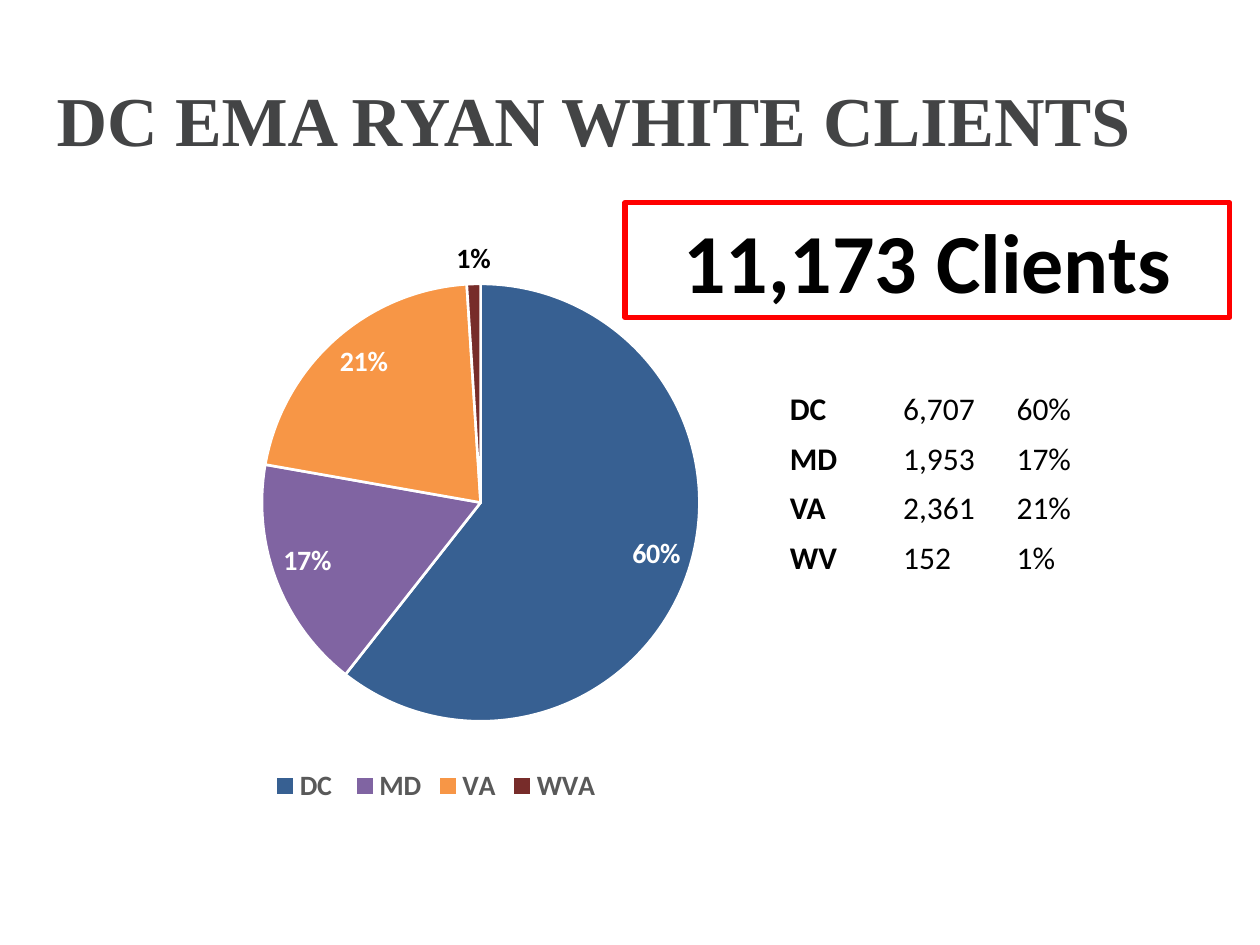
from pptx import Presentation
from pptx.chart.data import CategoryChartData
from pptx.dml.color import RGBColor
from pptx.enum.chart import XL_CHART_TYPE as ChartType
from pptx.enum.chart import XL_LABEL_POSITION as LabelPos
from pptx.enum.chart import XL_LEGEND_POSITION as LegendPos
from pptx.enum.shapes import MSO_SHAPE as Shape
from pptx.enum.text import MSO_ANCHOR as Anchor
from pptx.enum.text import PP_ALIGN as Align
from pptx.oxml import parse_xml
from pptx.oxml.ns import nsdecls, qn
from pptx.util import Inches, Pt

BLACK = RGBColor(0x00, 0x00, 0x00)
WHITE = RGBColor(0xFF, 0xFF, 0xFF)
RED = RGBColor(0xFF, 0x00, 0x00)
TITLE_GRAY = RGBColor(0x43, 0x44, 0x45)
LEGEND_GRAY = RGBColor(0x59, 0x59, 0x59)

# Legend name, share of clients, slice colour
SLICES = [
    ("DC ", 0.60, RGBColor(0x37, 0x60, 0x92)),
    ("MD", 0.17, RGBColor(0x80, 0x64, 0xA2)),
    ("VA", 0.21, RGBColor(0xF7, 0x96, 0x46)),
    ("WVA", 0.01, RGBColor(0x77, 0x2C, 0x2A)),
]
COUNTS = [
    ("DC", "6,707", "60%"),
    ("MD", "1,953", "17%"),
    ("VA", "2,361", "21%"),
    ("WV", "152", "1%"),
]


def style_font(font, size, color, bold=None, name="Calibri"):
    font.name, font.size, font.bold = name, Pt(size), bold
    font.color.rgb = color


def add_title(slide, text):
    title = slide.shapes.title
    title.left, title.top = Inches(0.35), Inches(0.49)
    title.width, title.height = Inches(9), Inches(1.25)
    frame = title.text_frame
    frame.text = text
    frame.vertical_anchor = Anchor.TOP
    frame.margin_top = Inches(0.12)
    heading = frame.paragraphs[0]
    heading.alignment = Align.LEFT
    style_font(heading.font, 40, TITLE_GRAY, True, "Times New Roman")


def set_plot_layout(chart, x, y, w, h):
    plot_area = chart._chartSpace.chart.plotArea
    for layout in plot_area.findall(qn("c:layout")):
        plot_area.remove(layout)
    sizes = "".join(f'<c:{tag} val="{value}"/>'
                    for tag, value in zip("xywh", (x, y, w, h)))
    plot_area.insert(0, parse_xml(
        f'<c:layout {nsdecls("c")}><c:manualLayout>'
        '<c:layoutTarget val="inner"/><c:xMode val="edge"/>'
        f'<c:yMode val="edge"/>{sizes}</c:manualLayout></c:layout>'))


def add_share_pie(slide):
    shares = CategoryChartData(number_format="0%")
    shares.categories = [name for name, _, _ in SLICES]
    shares.add_series("Series 1", [share for _, share, _ in SLICES])
    chart = slide.shapes.add_chart(
        ChartType.PIE, Inches(0.92), Inches(1.79), Inches(5.08), Inches(4.63),
        shares).chart
    chart.has_title = False
    style_font(chart.font, 10, BLACK)
    set_plot_layout(chart, 0.2, 0.1, 0.74, 0.75)

    chart.has_legend = True
    chart.legend.position = LegendPos.BOTTOM
    chart.legend.include_in_layout = False
    style_font(chart.legend.font, 16, LEGEND_GRAY, True)

    pie = chart.plots[0]
    pie.vary_by_categories = True
    series = pie.series[0]
    for index, (_, _, color) in enumerate(SLICES):
        slice_format = series.points[index].format
        slice_format.fill.solid()
        slice_format.fill.fore_color.rgb = color
        slice_format.line.color.rgb = WHITE
        slice_format.line.width = Pt(1.5)

    labels = series.data_labels
    labels.show_value = True
    labels.show_percentage = False
    labels.number_format = "0%"
    labels.number_format_is_linked = False
    labels.position = LabelPos.INSIDE_END
    style_font(labels.font, 16, WHITE, True)

    # The smallest slice has its label outside
    small_label = series.points[len(SLICES) - 1].data_label
    style_font(small_label.font, 16, BLACK, True)
    small_label.position = LabelPos.OUTSIDE_END


def add_tab_stops(paragraph, positions):
    stops = "".join(f'<a:tab pos="{Inches(pos)}" algn="l"/>'
                    for pos in positions)
    paragraph._p.get_or_add_pPr().append(
        parse_xml(f'<a:tabLst {nsdecls("a")}>{stops}</a:tabLst>'))


def add_counts(slide):
    frame = slide.shapes.add_textbox(
        Inches(6.17), Inches(3.07), Inches(3), Inches(1.78)).text_frame
    frame.word_wrap = True
    for index, (area, clients, share) in enumerate(COUNTS):
        row = frame.add_paragraph() if index else frame.paragraphs[0]
        row.line_spacing = 0.9
        if index:
            row.space_before = Pt(9)
        add_tab_stops(row, (0.9, 1.8))
        style_font(row.font, 18, BLACK)
        area_run = row.add_run()
        area_run.text = area
        area_run.font.bold = True
        row.add_run().text = f"\t{clients}\t{share}"


def add_total_box(slide, text):
    box = slide.shapes.add_shape(
        Shape.RECTANGLE, Inches(4.96), Inches(1.61), Inches(4.8), Inches(0.91))
    box.shadow.inherit = False
    box.fill.background()
    box.line.color.rgb = RED
    box.line.width = Pt(3)
    box.text_frame.text = text
    total = box.text_frame.paragraphs[0]
    total.alignment = Align.CENTER
    style_font(total.font, 48, BLACK, True)


def main():
    prs = Presentation()
    prs.slide_width, prs.slide_height = Inches(10), Inches(7.5)
    slide = prs.slides.add_slide(prs.slide_layouts[5])  # title only
    add_title(slide, "DC EMA RYAN WHITE CLIENTS")
    add_share_pie(slide)
    add_counts(slide)
    add_total_box(slide, "11,173 Clients")
    prs.save("out.pptx")


if __name__ == "__main__":
    main()
